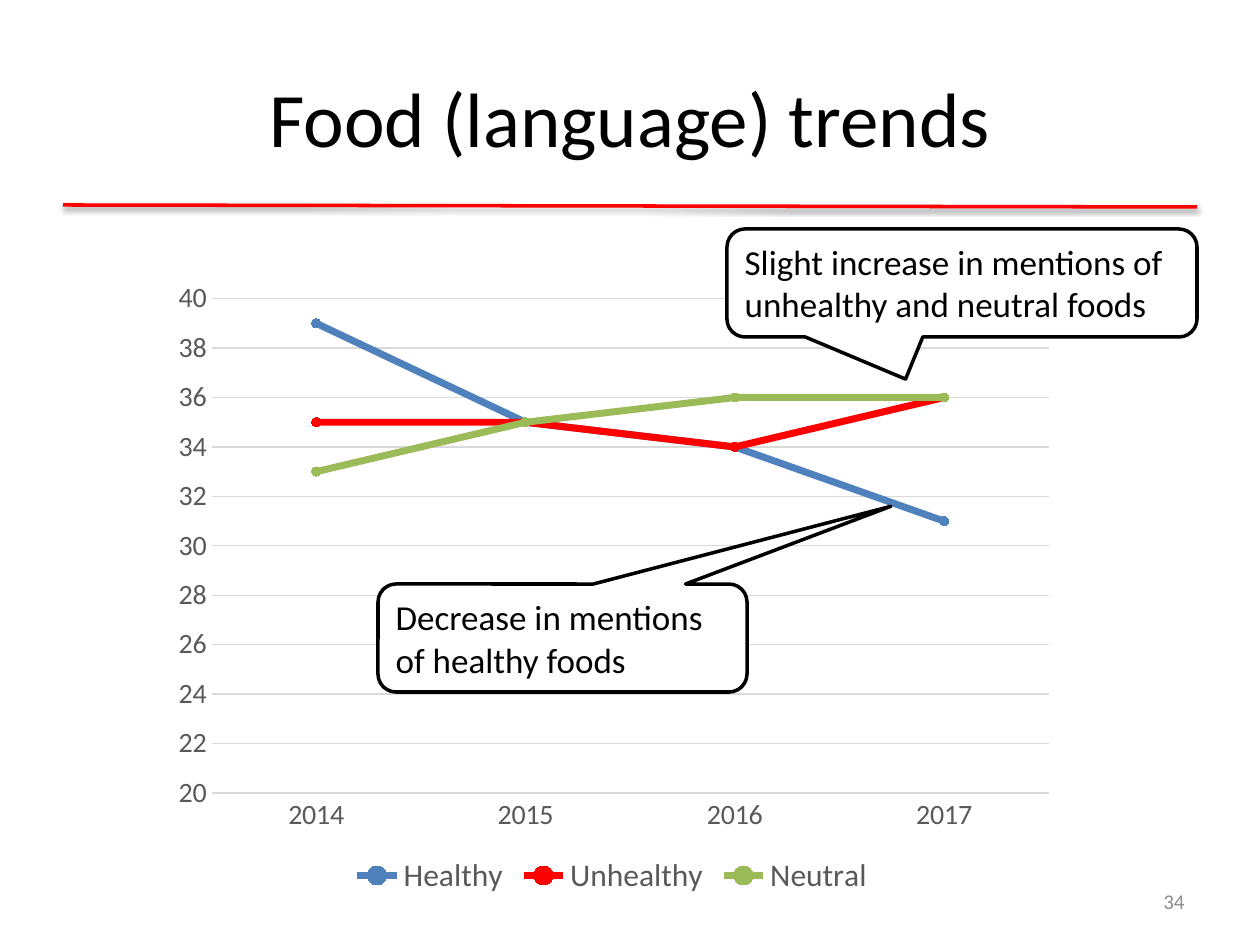
from lxml import etree
from pptx import Presentation
from pptx.chart.data import CategoryChartData
from pptx.dml.color import RGBColor
from pptx.enum.chart import XL_CHART_TYPE, XL_LEGEND_POSITION, XL_MARKER_STYLE, XL_TICK_MARK
from pptx.enum.shapes import MSO_CONNECTOR, MSO_SHAPE
from pptx.enum.text import MSO_ANCHOR, PP_ALIGN
from pptx.oxml import parse_xml
from pptx.oxml.ns import nsdecls, qn
from pptx.util import Pt

PX = 914400 / 126


def px(*lengths):
    """Turn pixel lengths into EMU."""
    return [round(length * PX) for length in lengths]


def style(font, size, color):
    font.name = "Calibri"
    font.size = Pt(size)
    font.color.rgb = RGBColor.from_string(color)


deck = Presentation()
deck.slide_width, deck.slide_height = px(1260, 945)
page = deck.slides.add_slide(deck.slide_layouts[6])
shapes = page.shapes

# Red rule with a soft shadow below it
rule = shapes.add_connector(MSO_CONNECTOR.STRAIGHT, *px(63, 205, 1197, 207))
rule.line.color.rgb = RGBColor.from_string("FF0000")
rule.line.width = Pt(2)
rule._element.spPr.append(parse_xml(
    f'<a:effectLst {nsdecls("a")}>'
    '<a:outerShdw blurRad="40000" dist="20000" dir="5400000" rotWithShape="0">'
    '<a:srgbClr val="000000"><a:alpha val="38000"/></a:srgbClr>'
    '</a:outerShdw></a:effectLst>'))

# Title and page number
labels = [
    ("Food (language) trends", (63, 38, 1134, 157), PP_ALIGN.CENTER, 44, "000000"),
    ("34", (903, 876, 294, 50), PP_ALIGN.RIGHT, 12, "8C8C8C"),
]
for text, place, align, size, color in labels:
    frame = shapes.add_textbox(*px(*place)).text_frame
    frame.word_wrap = True
    frame.vertical_anchor = MSO_ANCHOR.MIDDLE
    frame.text = text
    para = frame.paragraphs[0]
    para.alignment = align
    style(para.runs[0].font, size, color)

# Line chart: name, values, line colour, marker colour
trends = [
    ("Healthy", (39, 35, 34, 31), "4F81BD", "4F81BD"),
    ("Unhealthy", (35, 35, 34, 36), "FF0000", "C0504D"),
    ("Neutral", (33, 35, 36, 36), "9BBB59", "9BBB59"),
]
data = CategoryChartData()
data.categories = ["2014", "2015", "2016", "2017"]
for name, values, _, _ in trends:
    data.add_series(name, values)
chart = shapes.add_chart(XL_CHART_TYPE.LINE_MARKERS, *px(157, 267, 910, 634), data).chart
style(chart.font, 10, "000000")
chart.has_title = False
chart.has_legend = True
chart.legend.position = XL_LEGEND_POSITION.BOTTOM
chart.legend.include_in_layout = False
style(chart.legend.font, 18, "595959")

chart.plots[0].vary_by_categories = False
for series, (_, _, line_color, marker_color) in zip(chart.plots[0].series, trends):
    series.smooth = False
    series.format.line.color.rgb = RGBColor.from_string(line_color)
    series.format.line.width = Pt(4)
    marker = series.marker
    marker.style = XL_MARKER_STYLE.CIRCLE
    marker.size = 5
    marker.format.fill.solid()
    marker.format.fill.fore_color.rgb = RGBColor.from_string(marker_color)
    marker.format.line.color.rgb = RGBColor.from_string(marker_color)

years, counts = chart.category_axis, chart.value_axis
for axis in (years, counts):
    axis.major_tick_mark = axis.minor_tick_mark = XL_TICK_MARK.NONE
    style(axis.tick_labels.font, 16, "595959")
counts.minimum_scale, counts.maximum_scale, counts.major_unit = 20, 40, 2
counts.has_major_gridlines = True
counts.format.line.fill.background()
for line in (years.format.line, counts.major_gridlines.format.line):
    line.color.rgb = RGBColor.from_string("D9D9D9")
    line.width = Pt(0.75)

# Fixed plot area, as fractions of the chart
plot_area = chart._chartSpace.chart.plotArea
for layout in plot_area.findall(qn("c:layout")):
    plot_area.remove(layout)
layout = etree.Element(qn("c:layout"))
manual = etree.SubElement(layout, qn("c:manualLayout"))
for tag, value in [("layoutTarget", "inner"), ("xMode", "edge"), ("yMode", "edge"),
                   ("x", "0.06"), ("y", "0.05"), ("w", "0.92"), ("h", "0.78")]:
    etree.SubElement(manual, qn(f"c:{tag}")).set("val", value)
plot_area.insert(0, layout)

# Callouts: text, place, pointer tip
callouts = [
    ("Slight increase in mentions of unhealthy and neutral foods",
     (727, 229, 470, 108), (-0.12, 0.89)),
    ("Decrease in mentions of healthy foods", (378, 584, 369, 108), (0.89, -1.22)),
]
for text, place, tip in callouts:
    box = shapes.add_shape(MSO_SHAPE.ROUNDED_RECTANGULAR_CALLOUT, *px(*place))
    box.adjustments[0], box.adjustments[1] = tip
    box.shadow.inherit = False
    box.fill.solid()
    box.fill.fore_color.rgb = RGBColor.from_string("FFFFFF")
    box.line.color.rgb = RGBColor.from_string("000000")
    box.line.width = Pt(2)
    frame = box.text_frame
    frame.word_wrap = True
    frame.vertical_anchor = MSO_ANCHOR.MIDDLE
    frame.text = text
    para = frame.paragraphs[0]
    para.alignment = PP_ALIGN.LEFT
    style(para.runs[0].font, 20, "000000")

deck.save("out.pptx")
